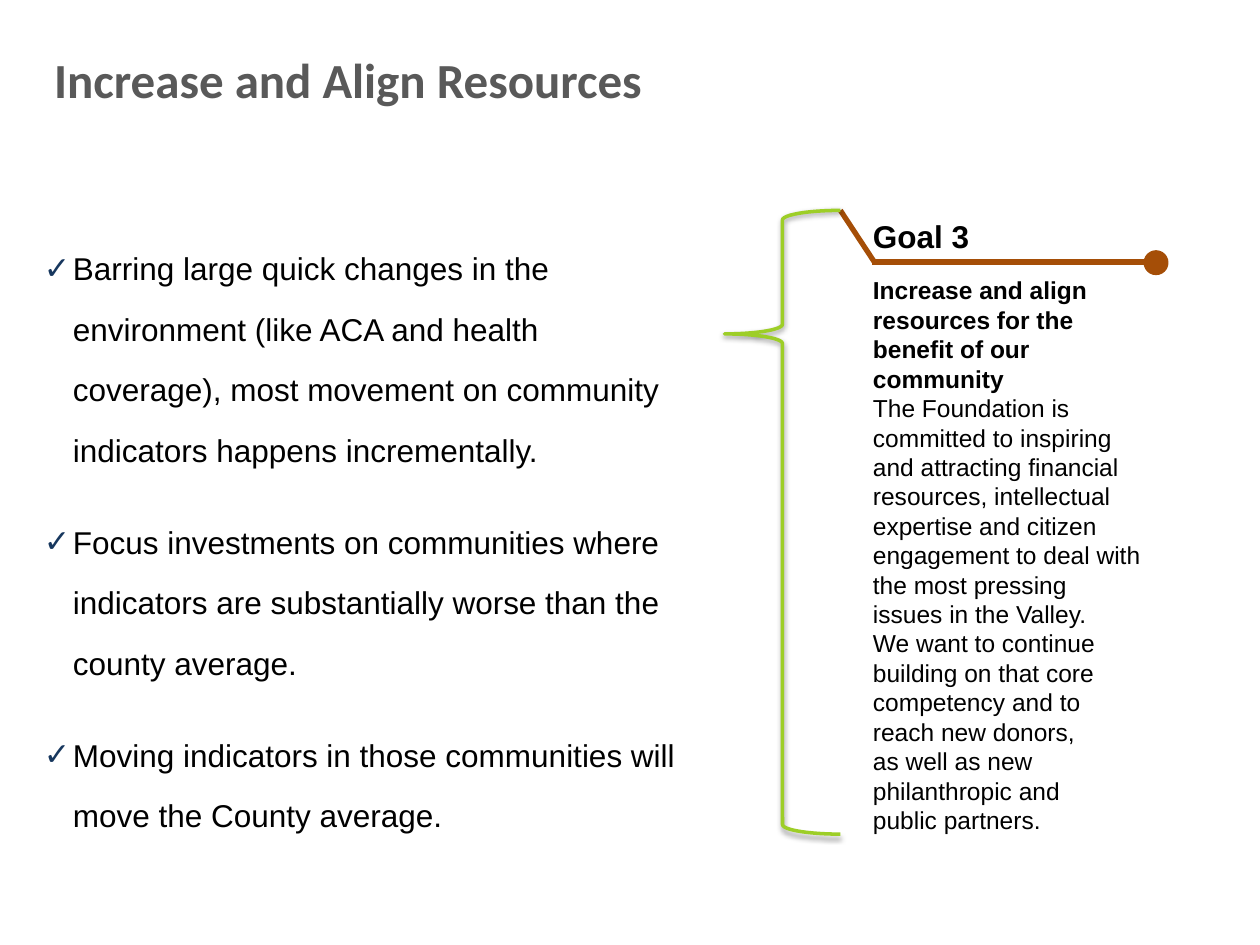
from lxml.etree import SubElement
from pptx import Presentation
from pptx.dml.color import RGBColor
from pptx.enum.shapes import MSO_CONNECTOR, MSO_SHAPE
from pptx.enum.text import MSO_ANCHOR, MSO_AUTO_SIZE, PP_ALIGN
from pptx.oxml.ns import qn
from pptx.util import Inches, Pt

BLACK, GREY, NAVY, BROWN, GREEN = "000000", "595959", "17375E", "A54E07", "9DCE27"

FINDINGS = [
    "Barring large quick changes in the environment (like ACA and health coverage), "
    "most movement on community indicators happens incrementally.",
    "Focus investments on communities where indicators are substantially worse than "
    "the county average.",
    "Moving indicators in those communities will move the County average.",
]
GOAL_NAME = "Goal 3"
GOAL_SUMMARY = "Increase and align resources for the benefit of our community"
GOAL_DETAILS = [
    "The Foundation is committed to inspiring and attracting financial resources, "
    "intellectual expertise and citizen engagement to deal with the most pressing "
    "issues in the Valley.",
    "We want to continue building on that core competency and to reach new donors,",
    "as well as new philanthropic and",
    "public partners.",
]


def rgb(value):
    return RGBColor.from_string(value)


def inches(*lengths):
    return [Inches(length) for length in lengths]


def style_font(font, color=BLACK, **values):
    for attribute, value in values.items():
        setattr(font, attribute, value)
    font.color.rgb = rgb(color)


def style_paragraph(paragraph, **values):
    for attribute, value in values.items():
        setattr(paragraph, attribute, value)


def add_check_mark(paragraph, indent):
    properties = paragraph._p.get_or_add_pPr()
    properties.set("marL", str(Inches(indent)))
    properties.set("indent", str(-Inches(indent)))
    color = SubElement(properties, qn("a:buClr"))
    SubElement(color, qn("a:srgbClr"), val=NAVY)
    SubElement(properties, qn("a:buFont"), typeface="Arial")
    SubElement(properties, qn("a:buChar"), char="✓")


def add_text_frame(slide, *box):
    frame = slide.shapes.add_textbox(*inches(*box)).text_frame
    frame.word_wrap = True
    frame.auto_size = MSO_AUTO_SIZE.NONE
    return frame


def add_paragraphs(frame, texts):
    """Yield one paragraph per text, starting with the frame's own first one."""
    for index, text in enumerate(texts):
        paragraph = frame.add_paragraph() if index else frame.paragraphs[0]
        paragraph.add_run().text = text
        yield paragraph


def add_title(slide, text):
    title = slide.shapes.title
    title.left, title.top, title.width, title.height = inches(0.33, 0, 9.33, 1.25)
    title.text_frame.text = text
    title.text_frame.vertical_anchor = MSO_ANCHOR.MIDDLE
    paragraph = title.text_frame.paragraphs[0]
    paragraph.alignment = PP_ALIGN.LEFT
    style_font(paragraph.runs[0].font, GREY, name="Calibri", size=Pt(28), bold=True)


def add_findings(slide):
    frame = add_text_frame(slide, 0.25, 1.75, 5.25, 5.75)
    for paragraph in add_paragraphs(frame, FINDINGS):
        style_paragraph(paragraph, line_spacing=1.6, space_after=Pt(18))
        add_check_mark(paragraph, 0.23)
        style_font(paragraph.runs[0].font, name="Arial", size=Pt(18))


def add_goal(slide):
    frame = add_text_frame(slide, 6.83, 1.67, 2.33, 5.05)
    texts = [GOAL_NAME, GOAL_SUMMARY, *GOAL_DETAILS]
    for paragraph, text in zip(add_paragraphs(frame, texts), texts):
        is_name = text == GOAL_NAME
        style_paragraph(paragraph, space_after=Pt(12 if is_name else 0))
        style_font(paragraph.runs[0].font, name="Arial", size=Pt(18 if is_name else 14),
                   bold=text in (GOAL_NAME, GOAL_SUMMARY))


def add_rule(slide, *ends):
    rule = slide.shapes.add_connector(MSO_CONNECTOR.STRAIGHT, *inches(*ends))
    rule.line.color.rgb = rgb(BROWN)
    rule.line.width = Pt(3)
    SubElement(rule._element.spPr, qn("a:effectLst"))


def add_outlined_shape(slide, preset, box, color):
    shape = slide.shapes.add_shape(preset, *inches(*box))
    shape.shadow.inherit = False
    shape.line.color.rgb = rgb(color)
    shape.line.width = Pt(2)
    return shape


def add_brace(slide):
    brace = add_outlined_shape(slide, MSO_SHAPE.LEFT_BRACE, (5.75, 1.67, 0.92, 4.95), GREEN)
    brace.fill.background()
    brace.adjustments[0], brace.adjustments[1] = 0.083, 0.198
    effects = brace._element.spPr.find(qn("a:effectLst"))
    shadow = SubElement(effects, qn("a:outerShdw"), blurRad=str(Pt(3.1)),
                        dist=str(Pt(1.6)), dir=str(90 * 60000), rotWithShape="0")
    color = SubElement(shadow, qn("a:srgbClr"), val=BLACK)
    SubElement(color, qn("a:alpha"), val="38000")


def add_goal_marker(slide):
    add_rule(slide, 9.08, 2.08, 6.92, 2.08)
    dot = add_outlined_shape(slide, MSO_SHAPE.OVAL, (9.09, 2, 0.17, 0.17), BROWN)
    dot.fill.solid()
    dot.fill.fore_color.rgb = rgb(BROWN)
    add_rule(slide, 6.94, 2.08, 6.67, 1.67)


def main():
    presentation = Presentation()
    presentation.slide_width, presentation.slide_height = inches(10, 7.5)
    slide = presentation.slides.add_slide(presentation.slide_layouts[5])
    add_title(slide, "Increase and Align Resources")
    add_goal(slide)
    add_goal_marker(slide)
    add_brace(slide)
    add_findings(slide)
    presentation.save("out.pptx")


if __name__ == "__main__":
    main()
